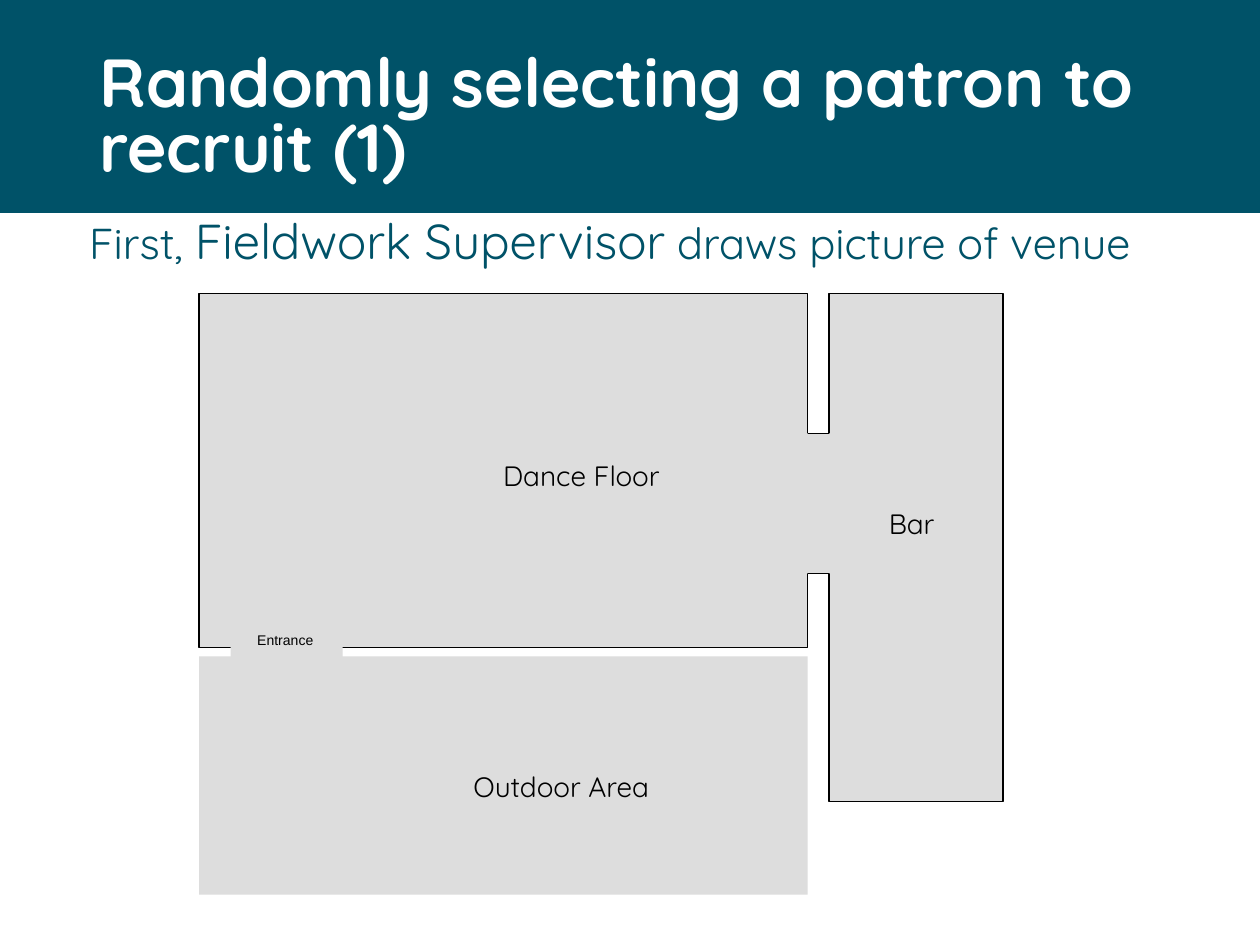
from lxml import etree
from pptx import Presentation
from pptx.dml.color import RGBColor
from pptx.enum.shapes import MSO_CONNECTOR, MSO_SHAPE
from pptx.enum.text import MSO_ANCHOR, PP_ALIGN
from pptx.oxml.ns import qn
from pptx.util import Inches, Pt

# Content
COLORS = {"teal": "005268", "white": "FFFFFF", "room": "DDDDDD", "black": "000000"}
FONT = "Quicksand"
TITLE = "Randomly selecting a patron to recruit (1)"
SUBTITLE = [("First, ", 24.7), ("Fieldwork Supervisor", 28), (" draws picture of venue", 24.7)]

# Floor plan, in inches: shared edges of the rooms
LEFT, TOP, HALL_W = 1.58, 2.33, 4.83
BAR_X, DOOR_TOP, DOOR_H = 6.58, 3.44, 1.11
ROOMS = [  # box, outlined
    ((BAR_X, TOP, 1.38, 4.03), True),              # bar
    ((LEFT, TOP, HALL_W, 2.81), True),             # dance floor
    ((5.86, DOOR_TOP, 1.17, DOOR_H), False),       # passage to the bar
    ((LEFT, 5.21, HALL_W, 1.89), False),           # outdoor area
    ((1.83, 4.8, 0.89, 0.9), False),               # entrance
]
LABELS = [  # text, box, font, size
    ("Outdoor Area", (3.04, 6.06, 2.83, 0.49), FONT, 16),
    ("Bar", (6.59, 3.97, 1.29, 0.49), FONT, 16),
    ("Dance Floor", (3.2, 3.59, 2.83, 0.49), FONT, 16),
    ("Entrance", (1.66, 4.96, 1.21, 0.39), "Arial", 8),
]


def rgb(name):
    return RGBColor.from_string(COLORS[name])


def inches(box):
    return [Inches(v) for v in box]


def add_rect(box, fill, outlined=False):
    sp = s.shapes.add_shape(MSO_SHAPE.RECTANGLE, *inches(box))
    sp.shadow.inherit = False
    sp.fill.solid()
    sp.fill.fore_color.rgb = rgb(fill)
    if outlined:
        sp.line.color.rgb = rgb("black")
        sp.line.width = Pt(0.75)
    else:
        sp.line.fill.background()


def add_text(box):
    tf = s.shapes.add_textbox(*inches(box)).text_frame
    tf.word_wrap = True
    return tf.paragraphs[0]


def style(font, name, size, color):
    font.name, font.size = name, Pt(size)
    font.color.rgb = rgb(color)


prs = Presentation()
prs.slide_width, prs.slide_height = Inches(10), Inches(7.5)
s = prs.slides.add_slide(prs.slide_layouts[5])

# Header band, moved behind the title
add_rect((0, 0, 10, 1.69), "teal")
title = s.shapes.title
s.shapes[-1].element.addnext(title.element)
title.left, title.top, title.width, title.height = inches((0.69, 0.4, 8.62, 1.38))
tf = title.text_frame
tf.text = TITLE
tf.word_wrap = True
tf.vertical_anchor = MSO_ANCHOR.TOP
p = tf.paragraphs[0]
p.alignment = PP_ALIGN.LEFT
p.line_spacing = Pt(37)
style(p.font, FONT, 38.8, "white")
p.font.bold = True

# Rooms and their labels
for box, outlined in ROOMS:
    add_rect(box, "room", outlined)
for text, box, font, size in LABELS:
    p = add_text(box)
    p.text = text
    p.alignment = PP_ALIGN.CENTER
    p.space_after = Pt(10)
    style(p.font, font, size, "black")

# Walls of the passage
for y in (DOOR_TOP + DOOR_H, DOOR_TOP):
    wall = s.shapes.add_connector(
        MSO_CONNECTOR.STRAIGHT, *inches((LEFT + HALL_W, y, BAR_X, y)))
    wall.line.color.rgb = rgb("black")
    wall.line.width = Pt(0.75)
    etree.SubElement(wall.element.spPr, qn("a:effectLst"))

# Subtitle
p = add_text((0.61, 1.62, 8.98, 0.88))
for text, size in SUBTITLE:
    r = p.add_run()
    r.text = text
    style(r.font, FONT, size, "teal")

prs.save("out.pptx")
